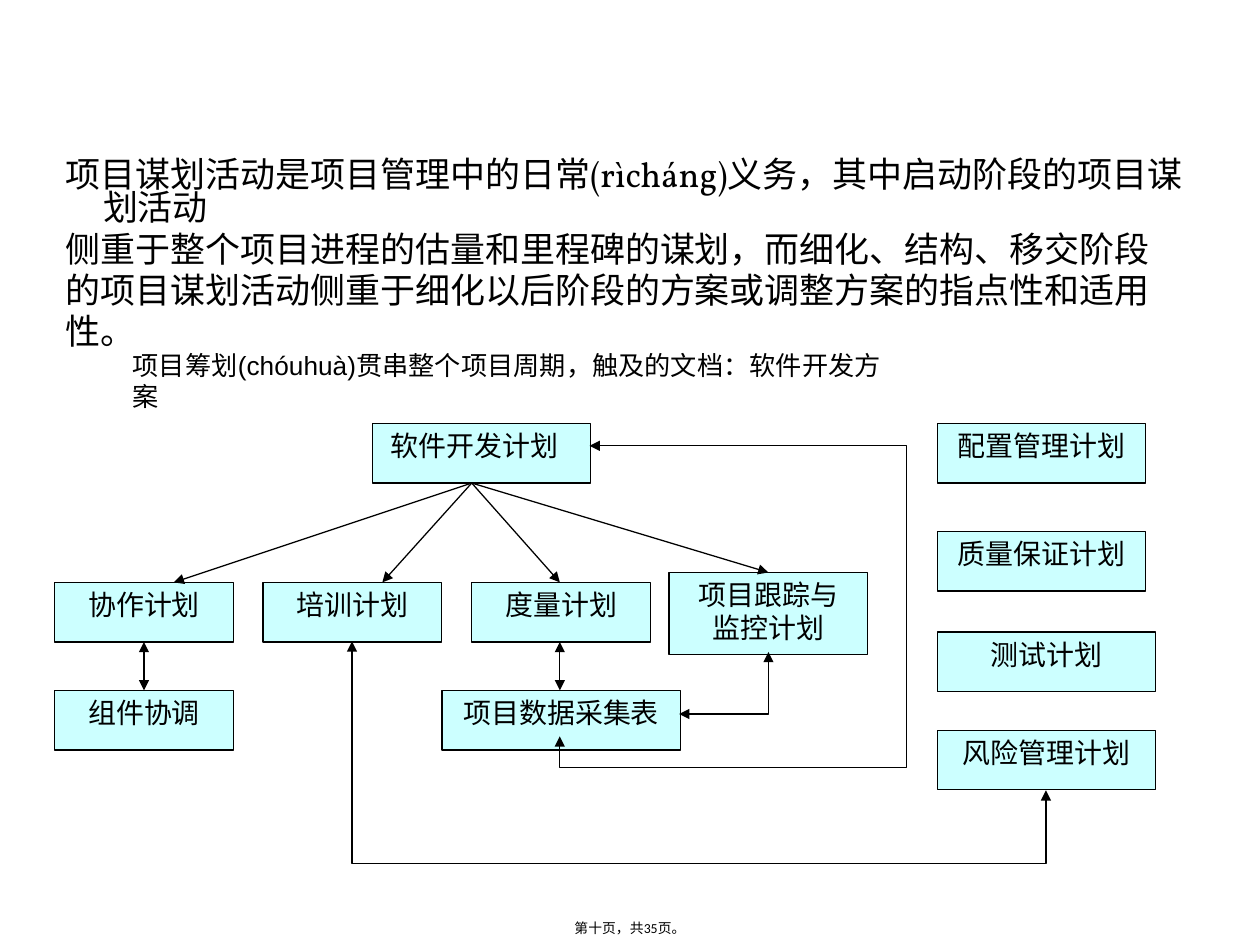
from lxml import etree
from pptx import Presentation
from pptx.dml.color import RGBColor
from pptx.enum.shapes import MSO_CONNECTOR, MSO_SHAPE
from pptx.enum.text import MSO_ANCHOR, PP_ALIGN
from pptx.oxml.ns import qn
from pptx.util import Inches, Pt

BLACK = RGBColor(0x00, 0x00, 0x00)
PALE_CYAN = RGBColor(0xCC, 0xFF, 0xFF)
STRAIGHT, ELBOW = MSO_CONNECTOR.STRAIGHT, MSO_CONNECTOR.ELBOW
RECTANGLE = MSO_SHAPE.RECTANGLE
TOP, MIDDLE = MSO_ANCHOR.TOP, MSO_ANCHOR.MIDDLE
LEFT, CENTER = PP_ALIGN.LEFT, PP_ALIGN.CENTER

PAGE_WIDTH, PAGE_HEIGHT = 10.15, 7.61
BOX_HEIGHT = 0.48
ROW_TWO, ROW_THREE = 1.28, 2.15

INTRO = [
    "项目谋划活动是项目管理中的日常(rìcháng)义务，其中启动阶段的项目谋划活动",
    "侧重于整个项目进程的估量和里程碑的谋划，而细化、结构、移交阶段",
    "的项目谋划活动侧重于细化以后阶段的方案或调整方案的指点性和适用",
    "性。",
]
SUMMARY = "项目筹划(chóuhuà)贯串整个项目周期，触及的文档：软件开发方案"
PLANS = [
    ("软件开发计划", 2.56, 0, 1.76, BOX_HEIGHT, LEFT),
    ("协作计划", 0, ROW_TWO, 1.44, BOX_HEIGHT, CENTER),
    ("培训计划", 1.68, ROW_TWO, 1.44, BOX_HEIGHT, CENTER),
    ("度量计划", 3.36, ROW_TWO, 1.44, BOX_HEIGHT, CENTER),
    ("项目跟踪与监控计划", 4.95, 1.2, 1.6, 0.66, CENTER),
    ("组件协调", 0, ROW_THREE, 1.44, BOX_HEIGHT, CENTER),
    ("项目数据采集表", 3.12, ROW_THREE, 1.92, BOX_HEIGHT, CENTER),
    ("配置管理计划", 7.11, 0, 1.68, BOX_HEIGHT, CENTER),
    ("质量保证计划", 7.11, 0.87, 1.68, BOX_HEIGHT, CENTER),
    ("测试计划", 7.11, 1.68, 1.76, BOX_HEIGHT, CENTER),
    ("风险管理计划", 7.11, 2.47, 1.76, BOX_HEIGHT, CENTER),
]
BRANCH_START = (3.36, BOX_HEIGHT)
BRANCH_ENDS = [(0.96, ROW_TWO), (2.64, ROW_TWO), (4.07, ROW_TWO), (5.75, 1.2)]
EXCHANGE_COLUMNS = [0.72, 4.07]
ELBOWS = [
    ("bentConnector4", (4.31, 0.18), (4.07, 2.52), 0, [-1063200, 110700]),
    ("bentConnector3", (5.79, -0.44), (4.59, 5.15), 270, [148900]),
    ("bentConnector2", (5.14, 1.73), (5.64, 2.45), 90, []),
]


def set_frame(shape, inset, anchor):
    """Set wrapping, margins and anchor of a shape's text."""
    frame = shape.text_frame
    frame.word_wrap = True
    frame.vertical_anchor = anchor
    frame.margin_left = frame.margin_right = Inches(inset)
    frame.margin_top = frame.margin_bottom = Inches(0.04)
    return frame


def add_span(para, text, font_name, size):
    """Add one black run to a paragraph."""
    span = para.add_run()
    span.text = text
    span.font.name = font_name
    span.font.size = Pt(size)
    span.font.color.rgb = BLACK


def add_text(page, left, top, width, height, texts, font_name, size, anchor=TOP):
    """Add a text box and return its paragraphs."""
    box = page.shapes.add_textbox(*map(Inches, (left, top, width, height)))
    frame = set_frame(box, 0.09, anchor)
    for index, text in enumerate(texts):
        para = frame.add_paragraph() if index else frame.paragraphs[0]
        add_span(para, text, font_name, size)
    return frame.paragraphs


def add_intro(page, left, top, width, height):
    """Add the opening text with hanging indents."""
    paras = add_text(page, left, top, width, height, INTRO, "Vollkorn", 20.3)
    for index, para in enumerate(paras):
        para.line_spacing = 0.8
        para.space_before = Pt(4.5 if index else 0)
        properties = para._p.get_or_add_pPr()
        properties.set("marL", str(Inches(0.3)))
        properties.set("indent", str(Inches(-0.3)))


def add_plan(page, left, top, width, height, text, alignment):
    """Add one labelled plan box."""
    box = page.shapes.add_shape(RECTANGLE, *map(Inches, (left, top, width, height)))
    box.shadow.inherit = False
    box.fill.solid()
    box.fill.fore_color.rgb = PALE_CYAN
    box.line.color.rgb = BLACK
    box.line.width = Pt(0.75)
    para = set_frame(box, 0.15, TOP).paragraphs[0]
    para.alignment = alignment
    add_span(para, text, "Arial", 16.2)


def add_arrow(page, kind, start, end, ends):
    """Add a connector with triangles at the named ends."""
    arrow = page.shapes.add_connector(kind, *map(Inches, (*start, *end)))
    arrow.line.color.rgb = BLACK
    arrow.line.width = Pt(0.75)
    for name in ends:
        etree.SubElement(arrow.get_or_add_ln(), qn(f"a:{name}"), type="triangle")
    etree.SubElement(arrow.element.spPr, qn("a:effectLst"))
    return arrow


def add_elbow(page, preset, start, end, turn, adjustments):
    """Add a double-headed elbow with its turn and bend positions."""
    arrow = add_arrow(page, ELBOW, start, end, ("headEnd", "tailEnd"))
    properties = arrow.element.spPr
    if turn:
        properties.find(qn("a:xfrm")).set("rot", str(turn * 60000))
    geometry = properties.find(qn("a:prstGeom"))
    geometry.set("prst", preset)
    guides = geometry.find(qn("a:avLst"))
    if guides is None:
        guides = etree.SubElement(geometry, qn("a:avLst"))
    for number, value in enumerate(adjustments, 1):
        etree.SubElement(guides, qn("a:gd"), name=f"adj{number}", fmla=f"val {value}")


def add_diagram(page, left, top):
    """Draw the plans and the arrows between them."""
    def place(point):
        """Move a diagram point to its page position."""
        return left + point[0], top + point[1]

    for text, x, y, width, height, alignment in PLANS:
        add_plan(page, *place((x, y)), width, height, text, alignment)
    for end in BRANCH_ENDS:
        add_arrow(page, STRAIGHT, place(BRANCH_START), place(end), ("tailEnd",))
    for x in EXCHANGE_COLUMNS:
        add_arrow(page, STRAIGHT, place((x, ROW_TWO + BOX_HEIGHT)),
                  place((x, ROW_THREE)), ("headEnd", "tailEnd"))
    for preset, start, end, turn, adjustments in ELBOWS:
        add_elbow(page, preset, place(start), place(end), turn, adjustments)


def add_footer(page, left, top, width, height):
    """Add the centred page count."""
    paras = add_text(page, left, top, width, height,
                     ["第十页，共35页。"], "Calibri", 8, MIDDLE)
    paras[0].alignment = CENTER


def main():
    """Build and save the deck."""
    deck = Presentation()
    deck.slide_width = Inches(PAGE_WIDTH)
    deck.slide_height = Inches(PAGE_HEIGHT)
    page = deck.slides.add_slide(deck.slide_layouts[6])
    add_intro(page, 0.44, 1.25, 9.19, 1.52)
    add_text(page, 0.98, 2.77, 6.4, 0.36, [SUMMARY], "Arial", 15.2)
    add_diagram(page, 0.44, 3.41)
    add_footer(page, 0, 7.33, PAGE_WIDTH, 0.28)
    deck.save("out.pptx")


if __name__ == "__main__":
    main()
